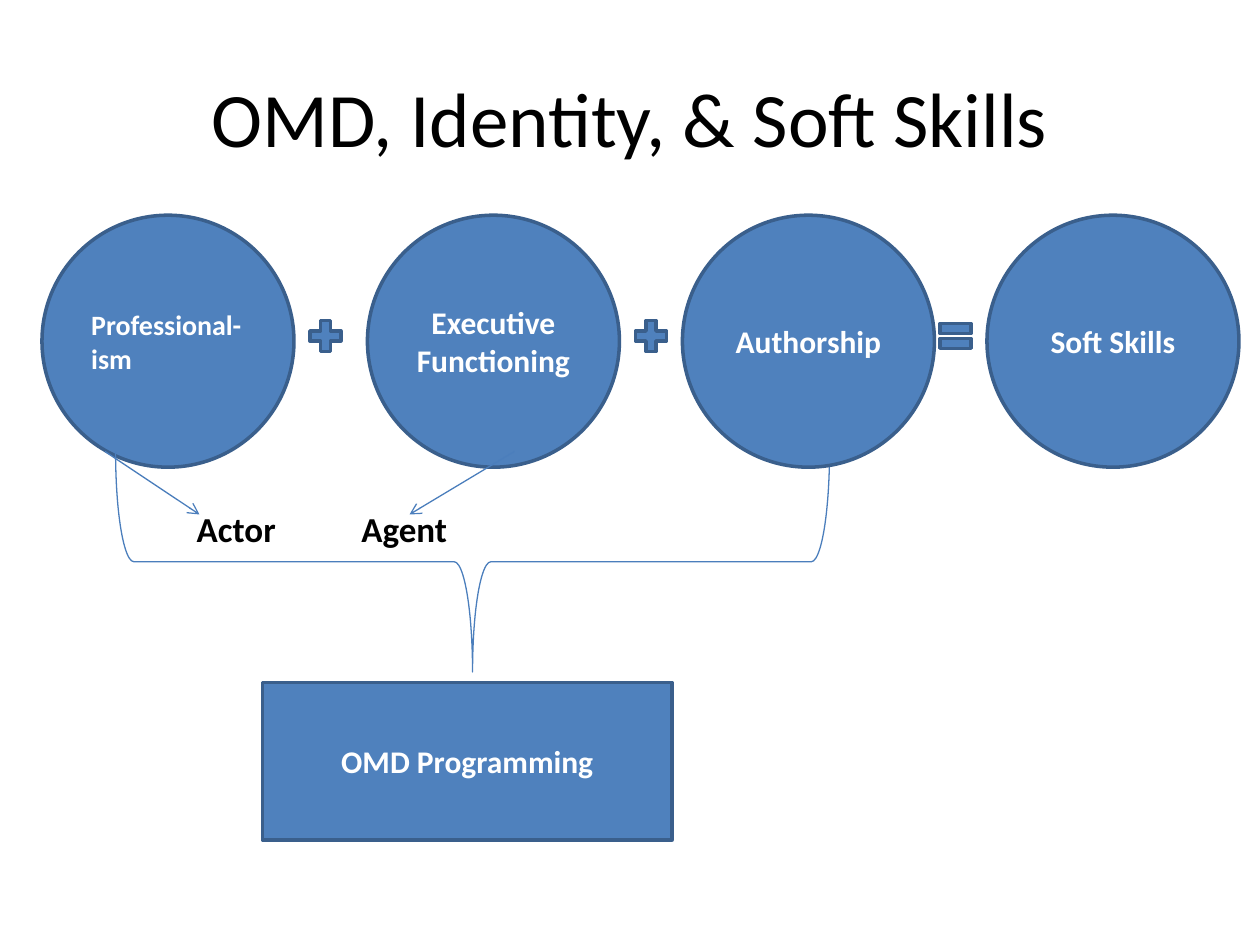
from lxml.etree import SubElement
from pptx import Presentation
from pptx.dml.color import RGBColor
from pptx.enum.shapes import MSO_CONNECTOR as Connector, MSO_SHAPE as Shape
from pptx.enum.text import MSO_ANCHOR as Anchor, MSO_AUTO_SIZE as AutoSize, PP_ALIGN as Align
from pptx.oxml.ns import qn
from pptx.util import Inches, Pt

COLORS = {"fill": "4F81BD", "edge": "3A5F8C", "thin": "4B7EBC", "light": "FFFFFF", "dark": "000000"}
COLUMNS, ROWS = 120, 90
WIDTH, HEIGHT = Inches(10), Inches(7.5)
CIRCLE_TOP, CIRCLE_SIZE = 20.5, 24
SIGN_TOP, SIGN_SIZE = 30, 4


def grid(column, row):
    """Return the slide position of a grid point."""
    return round(column * WIDTH / COLUMNS), round(row * HEIGHT / ROWS)


def color(name):
    """Return a palette colour."""
    return RGBColor.from_string(COLORS[name])


def write(frame, words, size, ink, bold=True, align=Align.CENTER, anchor=Anchor.MIDDLE):
    """Put one formatted paragraph into a text frame."""
    frame.text = words
    frame.word_wrap = True
    frame.vertical_anchor = anchor
    paragraph = frame.paragraphs[0]
    paragraph.alignment = align
    font = paragraph.font
    font.name, font.size, font.bold = "Calibri", Pt(size), bold
    font.color.rgb = color(ink)


def outline(line, name, width):
    """Set the colour and width of a line."""
    line.color.rgb = color(name)
    line.width = Pt(width)


def add_block(slide, kind, column, row, columns, rows):
    """Add a filled preset shape."""
    block = slide.shapes.add_shape(kind, *grid(column, row), *grid(columns, rows))
    block.shadow.inherit = False
    block.fill.solid()
    block.fill.fore_color.rgb = color("fill")
    outline(block.line, "edge", 2)
    return block


def add_circle(slide, column, words, size=18, align=Align.CENTER):
    """Add one skill circle to the equation."""
    circle = add_block(slide, Shape.OVAL, column, CIRCLE_TOP, CIRCLE_SIZE, CIRCLE_SIZE)
    write(circle.text_frame, words, size, "light", align=align)


def add_brace(slide, column, row, columns, rows):
    """Add a brace turned to point downwards."""
    brace = slide.shapes.add_shape(Shape.RIGHT_BRACE, *grid(column, row), *grid(columns, rows))
    brace.rotation = 90
    brace.shadow.inherit = False
    brace.fill.background()
    outline(brace.line, "thin", 0.75)


def add_label(slide, column, words):
    """Add a role label below the circles."""
    label = slide.shapes.add_textbox(*grid(column, 47.75), *grid(15, 5.25))
    write(label.text_frame, words, 20, "dark", anchor=Anchor.TOP)
    label.text_frame.auto_size = AutoSize.SHAPE_TO_FIT_TEXT


def add_arrow(slide, start, end):
    """Add a thin arrow between two grid columns."""
    arrow = slide.shapes.add_connector(Connector.STRAIGHT, *grid(start, 43), *grid(end, 49))
    outline(arrow.line, "thin", 0.75)
    SubElement(arrow.line._get_or_add_ln(), qn("a:tailEnd"), type="arrow")
    SubElement(arrow._element.spPr, qn("a:effectLst"))


def main():
    """Build and save the slide."""
    deck = Presentation()
    deck.slide_width, deck.slide_height = WIDTH, HEIGHT
    slide = deck.slides.add_slide(deck.slide_layouts[5])

    title = slide.shapes.title
    title.left, title.top = grid(6, 3.6)
    title.width, title.height = grid(108, 15)
    write(title.text_frame, "OMD, Identity, & Soft Skills", 44, "dark", bold=False)

    add_circle(slide, 4, "Professional-ism", size=16, align=Align.LEFT)
    add_circle(slide, 35, "Executive Functioning")
    add_brace(slide, 34.5, 19.5, 21, 68)
    add_circle(slide, 65, "Authorship")
    add_circle(slide, 94, "Soft Skills")

    for column, sign in ((29, Shape.MATH_PLUS), (60, Shape.MATH_PLUS), (89, Shape.MATH_EQUAL)):
        add_block(slide, sign, column, SIGN_TOP, SIGN_SIZE, SIGN_SIZE)

    programming = add_block(slide, Shape.RECTANGLE, 25, 65, 39, 15)
    write(programming.text_frame, "OMD Programming", 18, "light")

    for column, role, start, end in ((15, "Actor", 10, 19), (31, "Agent", 49, 39)):
        add_label(slide, column, role)
        add_arrow(slide, start, end)

    deck.save("out.pptx")


if __name__ == "__main__":
    main()
